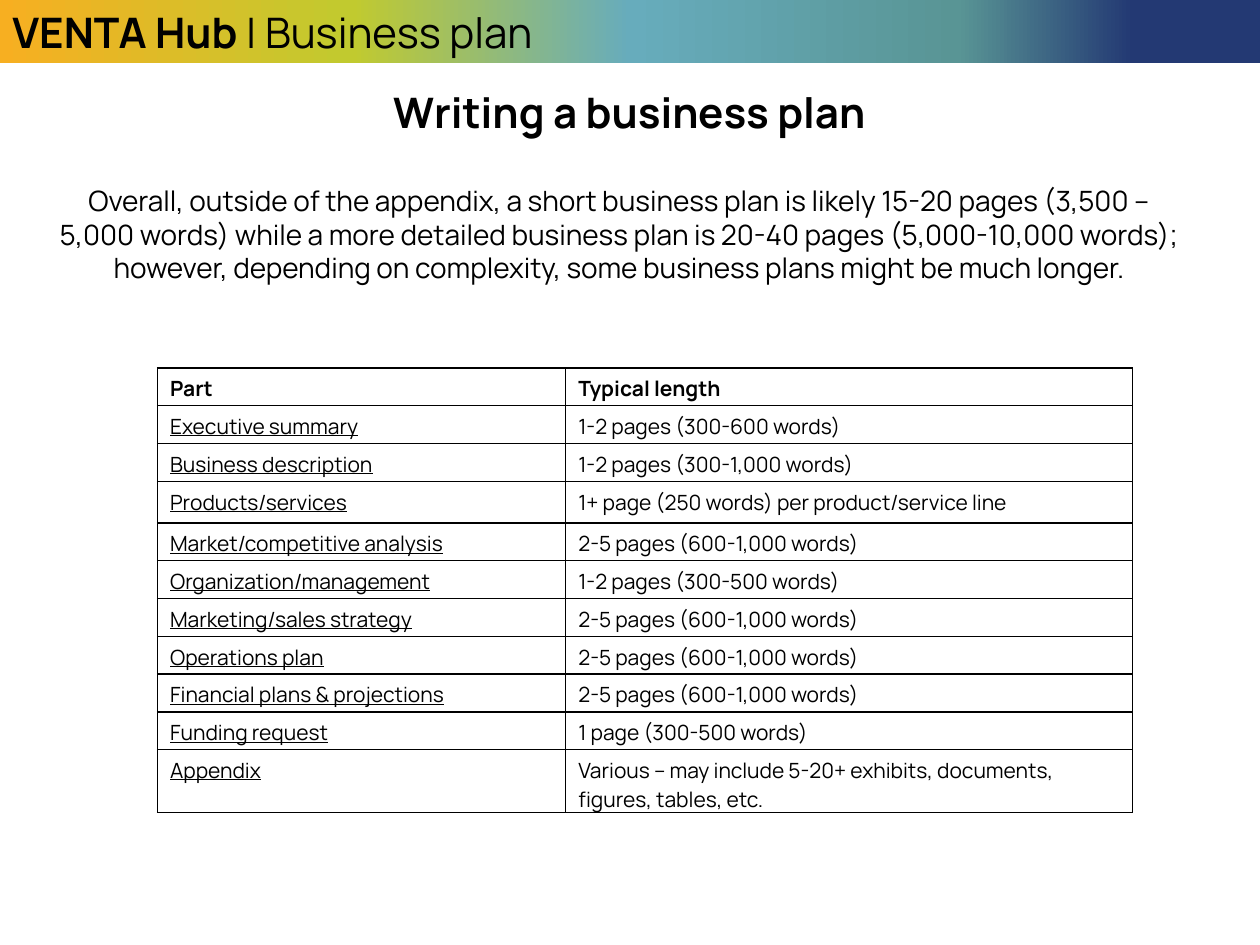
from copy import deepcopy

from pptx import Presentation
from pptx.dml.color import RGBColor
from pptx.enum.shapes import MSO_SHAPE
from pptx.enum.text import MSO_ANCHOR, PP_ALIGN
from pptx.oxml import parse_xml
from pptx.oxml.ns import nsdecls
from pptx.util import Inches, Pt

BLACK = RGBColor(0x00, 0x00, 0x00)
WHITE = RGBColor(0xFF, 0xFF, 0xFF)
BANNER_STOPS = [
    (0, RGBColor(0xF7, 0xAF, 0x21)),
    (0.28, RGBColor(0xC1, 0xCA, 0x2F)),
    (0.5, RGBColor(0x67, 0xAC, 0xBC)),
    (0.76, RGBColor(0x59, 0x95, 0x95)),
    (0.9, RGBColor(0x23, 0x39, 0x73)),
]
RECTANGLE = MSO_SHAPE.RECTANGLE
LEFT, CENTER = PP_ALIGN.LEFT, PP_ALIGN.CENTER
TOP, MIDDLE = MSO_ANCHOR.TOP, MSO_ANCHOR.MIDDLE

COLUMN_WIDTHS = [3.24, 4.5]
ROW_HEIGHTS = [0.3] * 3 + [0.33] + [0.3] * 6 + [0.5]
PLAN_PARTS = [
    ("Part", "Typical length"),
    ("Executive summary", "1-2 pages (300-600 words)"),
    ("Business description", "1-2 pages (300-1,000 words)"),
    ("Products/services", "1+ page (250 words) per product/service line"),
    ("Market/competitive analysis", "2-5 pages (600-1,000 words)"),
    ("Organization/management", "1-2 pages (300-500 words)"),
    ("Marketing/sales strategy", "2-5 pages (600-1,000 words)"),
    ("Operations plan", "2-5 pages (600-1,000 words)"),
    ("Financial plans & projections", "2-5 pages (600-1,000 words)"),
    ("Funding request", "1 page (300-500 words)"),
    ("Appendix", "Various – may include 5-20+ exhibits, documents, figures, tables, etc."),
]


class PageBuilder:
    font_name = "Manrope"

    def __init__(self, page):
        self.page = page

    def style(self, span, size, bold=False, underline=False):
        font = span.font
        font.name, font.size = self.font_name, Pt(size)
        font.bold, font.underline = bold, underline
        font.color.rgb = BLACK

    def banner(self, strong, light, width, height):
        """Gradient bar with a bold name followed by a regular section title."""
        bar = self.page.shapes.add_shape(RECTANGLE, 0, 0, Inches(width), Inches(height))
        bar.shadow.inherit = False
        bar.line.fill.background()
        bar.fill.gradient()
        bar.fill.gradient_angle = 0
        stop_list = bar._element.spPr.find(".//{*}gsLst")
        for _ in range(len(BANNER_STOPS) - len(stop_list)):
            stop_list.append(deepcopy(stop_list[0]))
        for stop, (position, color) in zip(bar.fill.gradient_stops, BANNER_STOPS):
            stop.position = position
            stop.color.rgb = color
        bar.text_frame.vertical_anchor = MIDDLE
        para = bar.text_frame.paragraphs[0]
        para.alignment = LEFT
        for text, bold in ((strong, True), (light, False)):
            span = para.add_run()
            span.text = text
            self.style(span, 24, bold)

    def text(self, text, left, top, width, height, size, bold=False, anchor=TOP):
        box = self.page.shapes.add_textbox(
            Inches(left), Inches(top), Inches(width), Inches(height))
        frame = box.text_frame
        frame.word_wrap = True
        frame.vertical_anchor = anchor
        frame.text = text
        para = frame.paragraphs[0]
        para.alignment = CENTER
        self.style(para.runs[0], size, bold)

    def border(self, cell):
        properties = cell._tc.get_or_add_tcPr()
        for index, side in enumerate(("lnL", "lnR", "lnT", "lnB")):
            properties.insert(index, parse_xml(
                f'<a:{side} {nsdecls("a")} w="{Pt(1)}"><a:solidFill>'
                f'<a:srgbClr val="{BLACK}"/></a:solidFill></a:{side}>'))

    def table(self, rows, left, top):
        grid = self.page.shapes.add_table(
            len(rows), len(COLUMN_WIDTHS), Inches(left), Inches(top),
            Inches(sum(COLUMN_WIDTHS)), Inches(sum(ROW_HEIGHTS))).table
        for column, width in zip(grid.columns, COLUMN_WIDTHS):
            column.width = Inches(width)
        for row, height in zip(grid.rows, ROW_HEIGHTS):
            row.height = Inches(height)
        for row_index, texts in enumerate(rows):
            header = row_index == 0
            for column_index, text in enumerate(texts):
                cell = grid.cell(row_index, column_index)
                cell.margin_top, cell.margin_bottom = Inches(0.05), 0
                cell.fill.solid()
                cell.fill.fore_color.rgb = WHITE
                cell.text_frame.text = text
                self.style(cell.text_frame.paragraphs[0].runs[0], 12, bold=header,
                           underline=column_index == 0 and not header)
                self.border(cell)


def main():
    deck = Presentation()
    deck.slide_width, deck.slide_height = Inches(10), Inches(7.5)
    builder = PageBuilder(deck.slides.add_slide(deck.slide_layouts[6]))
    builder.text("Writing a business plan", 0.3, 0.64, 9.39, 0.5, 24, bold=True, anchor=MIDDLE)
    builder.banner("VENTA Hub ", "| Business plan", 10, 0.5)
    builder.table(PLAN_PARTS, 1.25, 2.92)
    builder.text(
        "Overall, outside of the appendix, a short business plan is likely 15-20 pages "
        "(3,500 – 5,000 words) while a more detailed business plan is 20-40 pages "
        "(5,000-10,000 words); however, depending on complexity, some business plans "
        "might be much longer.", 0.3, 1.41, 9.23, 1.18, 16)
    deck.save("out.pptx")


if __name__ == "__main__":
    main()
